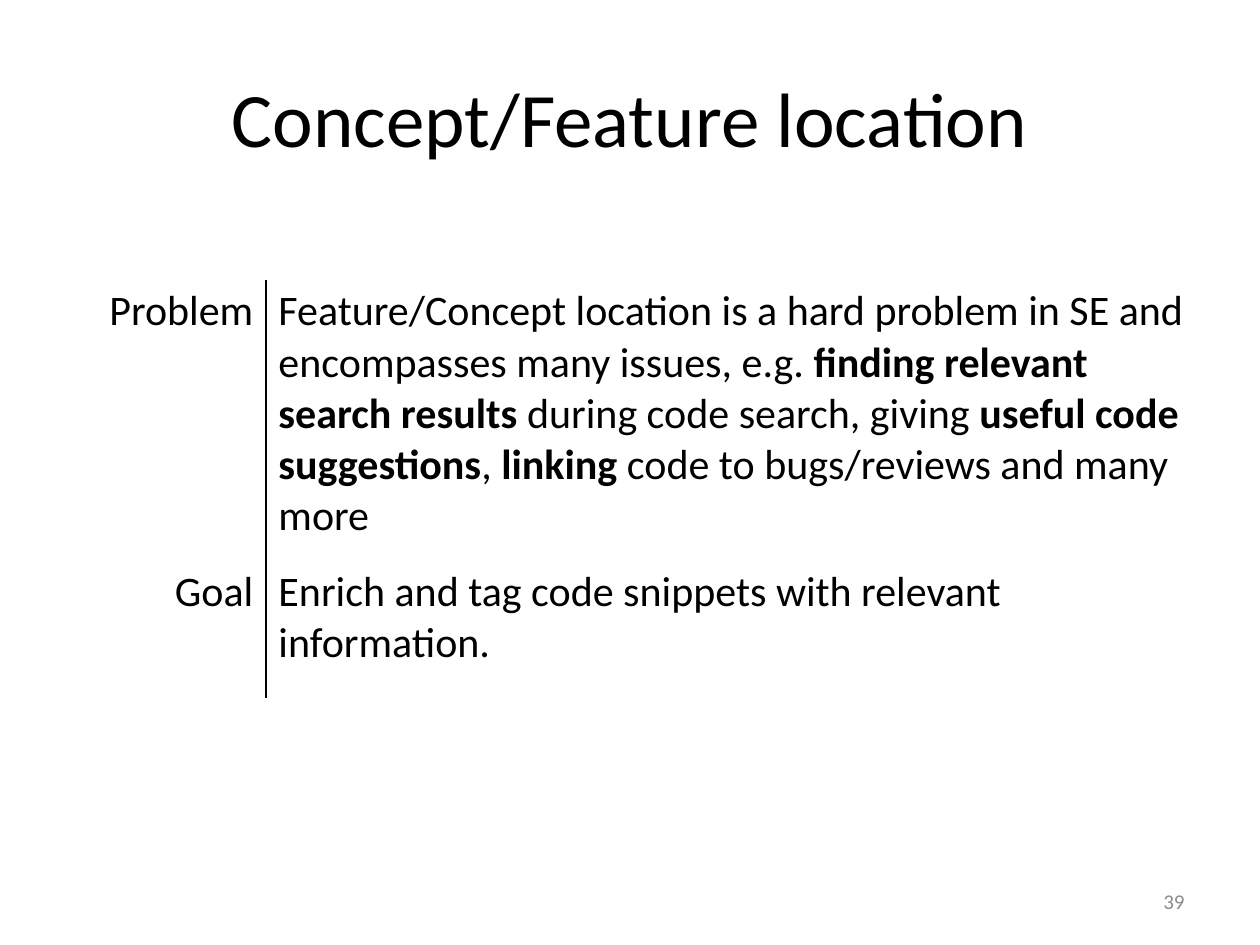
from lxml import etree
from pptx import Presentation
from pptx.dml.color import RGBColor
from pptx.enum.text import MSO_ANCHOR, PP_ALIGN
from pptx.oxml.ns import qn
from pptx.util import Cm, Pt

LEFT, CENTER, RIGHT = PP_ALIGN.LEFT, PP_ALIGN.CENTER, PP_ALIGN.RIGHT
MIDDLE = MSO_ANCHOR.MIDDLE
BLACK = RGBColor(0x00, 0x00, 0x00)
GRAY = RGBColor(0x8C, 0x8C, 0x8C)
NO_STYLE = "{2D5ABB26-0587-4C30-8999-92F81FD0307C}"


def write(frame, text, size=24, color=BLACK, align=LEFT):
    """Fill a text frame; parts between asterisks become bold."""
    frame.word_wrap = True
    paragraph = frame.paragraphs[0]
    paragraph.alignment = align
    for index, part in enumerate(text.split("*")):
        run = paragraph.add_run()
        run.text = part
        run.font.name = "Calibri"
        run.font.size = Pt(size)
        run.font.color.rgb = color
        run.font.bold = index % 2 == 1


def add_border(cell, side):
    """Draw a thin black line on one side of a cell."""
    line = etree.Element(qn(f"a:{side}"), w=str(Pt(1)))
    fill = etree.SubElement(line, qn("a:solidFill"))
    etree.SubElement(fill, qn("a:srgbClr"), val=str(BLACK))
    cell._tc.get_or_add_tcPr().insert(0, line)


prs = Presentation()
prs.slide_width, prs.slide_height = Cm(25.4), Cm(19.05)
slide = prs.slides.add_slide(prs.slide_layouts[6])

# Title
title = slide.shapes.add_textbox(Cm(1.27), Cm(0.76), Cm(22.86), Cm(3.18)).text_frame
title.vertical_anchor = MIDDLE
write(title, "Concept/Feature location", size=44, align=CENTER)

# Problem and goal, split by a vertical line
topics = [
    ("Problem", "Feature/Concept location is a hard problem in SE and encompasses "
     "many issues, e.g. *finding relevant search results* during code search, "
     "giving *useful code suggestions*, *linking* code to bugs/reviews and many more"),
    ("Goal", "Enrich and tag code snippets with relevant information."),
]
overview = slide.shapes.add_table(2, 2, Cm(1.27), Cm(5.64), Cm(22.86), Cm(8.43)).table
overview.first_row = overview.horz_banding = False
overview._tbl.tblPr.find(qn("a:tableStyleId")).text = NO_STYLE
overview.columns[0].width, overview.columns[1].width = Cm(4.09), Cm(18.77)
overview.rows[0].height, overview.rows[1].height = Cm(5.66), Cm(2.77)

for row, (topic, description) in enumerate(topics):
    topic_cell, description_cell = overview.cell(row, 0), overview.cell(row, 1)
    write(topic_cell.text_frame, topic, align=RIGHT)
    write(description_cell.text_frame, description)
    for cell, side in ((topic_cell, "lnR"), (description_cell, "lnL")):
        cell.fill.background()
        add_border(cell, side)

# Page number
page_number = slide.shapes.add_textbox(Cm(18.2), Cm(17.66), Cm(5.93), Cm(1.01)).text_frame
page_number.vertical_anchor = MIDDLE
write(page_number, "39", size=12, color=GRAY, align=RIGHT)

prs.save("out.pptx")
